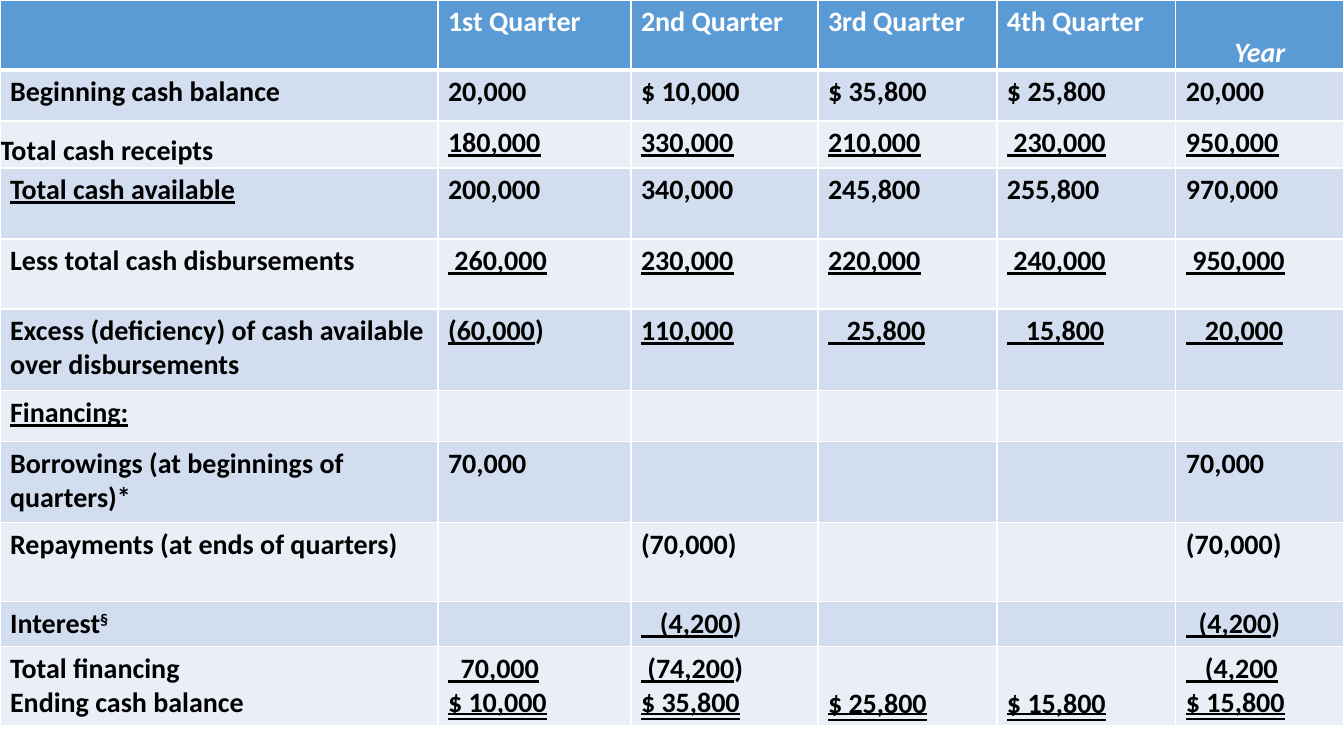
from dataclasses import dataclass

from lxml import etree
from pptx import Presentation
from pptx.dml.color import RGBColor
from pptx.enum.text import MSO_ANCHOR, MSO_UNDERLINE, PP_ALIGN
from pptx.oxml.ns import qn
from pptx.util import Emu, Pt

BOTTOM = MSO_ANCHOR.BOTTOM
CENTER = PP_ALIGN.CENTER
SINGLE = MSO_UNDERLINE.SINGLE_LINE
DOUBLE = MSO_UNDERLINE.DOUBLE_LINE
SUPERSCRIPT = "superscript"
EMU_PER_PX = 914400 / 100.8
EMPTY = []


@dataclass(frozen=True)
class Theme:
    font: str = "Calibri"
    size: int = 20
    header_fill: str = "5B9BD5"
    band_fills: tuple = ("D2DEEF", "EAEFF7")
    header_text: str = "FFFFFF"
    body_text: str = "000000"
    border: str = "FFFFFF"
    border_width: int = 1
    header_rule_width: int = 3


def px(length):
    return Emu(round(length * EMU_PER_PX))


# A line is a list of (text, style) runs
def plain(text):
    return [(text, None)]


def under(text):
    return [(text, SINGLE)]


def double(text):
    return [(text, DOUBLE)]


def each(style, *texts):
    return [style(text) if text else EMPTY for text in texts]


class SlideBuilder:
    def __init__(self, presentation, theme):
        self.theme = theme
        self.slide = presentation.slides.add_slide(presentation.slide_layouts[6])

    def table(self, left, top, widths, heights):
        frame = self.slide.shapes.add_table(
            len(heights), len(widths), px(left), px(top), px(sum(widths)), px(sum(heights)))
        table = frame.table
        for column, width in zip(table.columns, widths):
            column.width = px(width)
        for row, height in zip(table.rows, heights):
            row.height = px(height)
        return table

    def borders(self, cell, bottom_width):
        properties = cell._tc.get_or_add_tcPr()
        width = self.theme.border_width
        for side, points in (("L", width), ("R", width), ("T", width), ("B", bottom_width)):
            line = etree.SubElement(properties, qn(f"a:ln{side}"), w=str(Pt(points)))
            fill = etree.SubElement(line, qn("a:solidFill"))
            etree.SubElement(fill, qn("a:srgbClr"), val=self.theme.border)

    def cell(self, cell, lines, row_index):
        theme = self.theme
        header = row_index == 0
        self.borders(cell, theme.header_rule_width if header else theme.border_width)
        cell.fill.solid()
        fill = theme.header_fill if header else theme.band_fills[(row_index - 1) % 2]
        cell.fill.fore_color.rgb = RGBColor.from_string(fill)
        color = theme.header_text if header else theme.body_text
        for index, line in enumerate(lines):
            frame = cell.text_frame
            paragraph = frame.add_paragraph() if index else frame.paragraphs[0]
            for text, style in line:
                self.run(paragraph, text, style, color)

    def run(self, paragraph, text, style, color):
        run = paragraph.add_run()
        run.text = text
        font = run.font
        font.name, font.size, font.bold = self.theme.font, Pt(self.theme.size), True
        font.color.rgb = RGBColor.from_string(color)
        if style == SUPERSCRIPT:
            run._r.get_or_add_rPr().set("baseline", "30000")
        elif style is not None:
            font.underline = style

    def sit_on_bottom(self, cell):
        cell.vertical_anchor = BOTTOM
        cell.margin_left = cell.margin_top = cell.margin_right = cell.margin_bottom = 0
        return cell.text_frame.paragraphs[0]


# Cash budget, one list of lines per row
HEADER = each(plain, "", "1st Quarter", "2nd Quarter", "3rd Quarter", "4th Quarter", "Year")
BEGINNING = each(plain, "Beginning cash balance", "20,000", "$ 10,000", "$ 35,800",
                 "$ 25,800", "20,000")
RECEIPTS = [plain("Total cash receipts")] + each(
    under, "180,000", "330,000", "210,000", " 230,000", "950,000")
AVAILABLE = [under("Total cash available")] + each(
    plain, "200,000", "340,000", "245,800", "255,800", "970,000")
DISBURSEMENTS = [plain("Less total cash disbursements")] + each(
    under, " 260,000", "230,000", "220,000", " 240,000", " 950,000")
EXCESS = [plain("Excess (deficiency) of cash available over disbursements"),
          under("(60,000") + plain(")")] + each(
    under, "110,000", "   25,800", "   15,800", "   20,000")
FINANCING = each(under, "Financing:", "", "", "", "", "")
BORROWINGS = each(plain, "Borrowings (at beginnings of quarters)*", "70,000", "", "", "",
                  "70,000")
REPAYMENTS = each(plain, "Repayments (at ends of quarters)", "", "(70,000)", "", "",
                  "(70,000)")
INTEREST = [plain("Interest") + [("§", SUPERSCRIPT)], EMPTY,
            under("   (4,200") + plain(")"), EMPTY, EMPTY,
            under("  (4,200") + plain(")")]
TOTAL_FINANCING = [plain("Total financing"), under("  70,000"),
                   under(" (74,200") + plain(")"), EMPTY, EMPTY, under("   (4,200")]
ENDING = [plain("Ending cash balance")] + each(
    double, "$ 10,000", "$ 35,800", "$ 25,800", "$ 15,800", "$ 15,800")

# Row height in px, then the lines that share the row
BUDGET = [
    (70, [HEADER]),
    (51, [BEGINNING]),
    (47, [RECEIPTS]),
    (71, [AVAILABLE]),
    (70, [DISBURSEMENTS]),
    (82, [EXCESS]),
    (51, [FINANCING]),
    (81, [BORROWINGS]),
    (79, [REPAYMENTS]),
    (45, [INTEREST]),
    (79, [TOTAL_FINANCING, ENDING]),
]
COLUMN_WIDTHS = [438, 193, 187, 179, 179, 168]


def main():
    presentation = Presentation()
    presentation.slide_width, presentation.slide_height = px(1344), px(756)
    builder = SlideBuilder(presentation, Theme())
    table = builder.table(0, 0, COLUMN_WIDTHS, [height for height, _ in BUDGET])

    for row_index, (_, entries) in enumerate(BUDGET):
        for column_index, lines in enumerate(zip(*entries)):
            shown = [line for line in lines if line]
            builder.cell(table.cell(row_index, column_index), shown, row_index)

    # Cells that sit on the bottom edge
    builder.sit_on_bottom(table.cell(0, 5)).alignment = CENTER
    builder.sit_on_bottom(table.cell(2, 0)).line_spacing = Pt(16)
    table.cell(0, 5).text_frame.paragraphs[0].runs[0].font.italic = True
    for column_index in (3, 4):
        table.cell(len(BUDGET) - 1, column_index).vertical_anchor = BOTTOM

    presentation.save("out.pptx")


if __name__ == "__main__":
    main()
